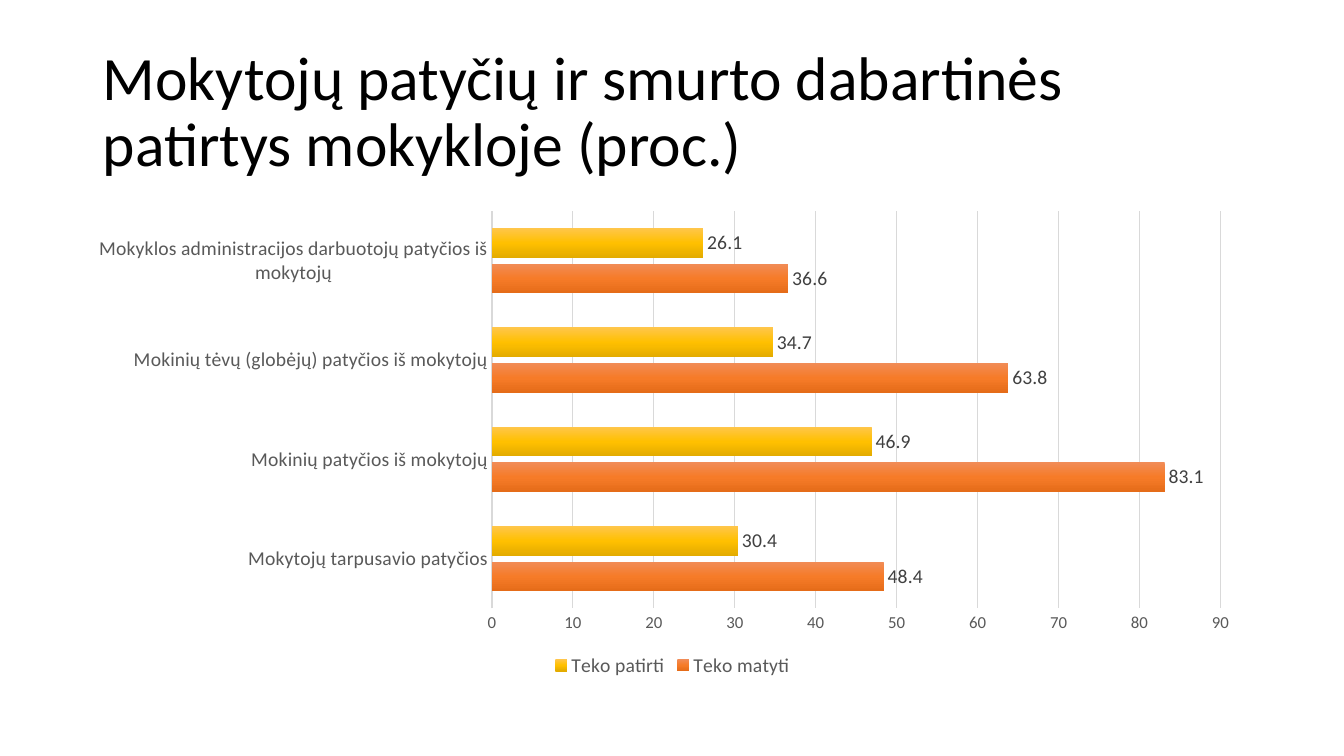
from copy import deepcopy
from pptx import Presentation
from pptx.chart.data import CategoryChartData
from pptx.dml.color import RGBColor
from pptx.enum import chart as ch, text as tx
from pptx.util import Inches, Pt

TITLE = "Mokytojų patyčių ir smurto dabartinės patirtys mokykloje (proc.)"
CATS = [
    "Mokytojų tarpusavio patyčios",
    "Mokinių patyčios iš mokytojų",
    "Mokinių tėvų (globėjų) patyčios iš mokytojų",
    "Mokyklos administracijos darbuotojų patyčios iš mokytojų",
]
SERIES = [
    ("Teko matyti", (48.4, 83.1, 63.8, 36.6), ("F18C57", "F67B28", "E56C19")),
    ("Teko patirti", (30.4, 46.9, 34.7, 26.1), ("FFC64B", "FFC000", "E3AB00")),
]
FACE = "Calibri"
GRAY, RULE = "595959", "D9D9D9"


def tint(hue):
    return RGBColor.from_string(hue)


def style(font, size, hue):
    font.name, font.size, font.bold = FACE, Pt(size), False
    font.color.rgb = tint(hue)


def write(shape, words, size=18, hue="000000", align=tx.PP_ALIGN.LEFT, gap=1.0):
    frame = shape.text_frame
    frame.auto_size = tx.MSO_AUTO_SIZE.NONE
    frame.word_wrap = True
    frame.vertical_anchor = tx.MSO_ANCHOR.MIDDLE
    para = frame.paragraphs[0]
    para.alignment, para.line_spacing = align, gap
    run = para.add_run()
    run.text = words
    style(run.font, size, hue)


def rule(line, width):
    line.color.rgb = tint(RULE)
    line.width = Pt(width)


def shade(ser, hues):
    fill = ser.format.fill
    fill.gradient()
    fill.gradient_angle = 270
    stops = next(ser._element.iter("{*}gsLst"))
    stops.append(deepcopy(stops[-1]))
    for i, (stop, hue) in enumerate(zip(fill.gradient_stops, hues)):
        stop.position = i / 2
        stop.color.rgb = tint(hue)


def main():
    prs = Presentation()
    prs.slide_width, prs.slide_height = Inches(13.33), Inches(7.5)
    slide = prs.slides.add_slide(prs.slide_layouts[5])

    title = slide.shapes.title
    title.left, title.top = Inches(0.92), Inches(0.4)
    title.width, title.height = Inches(10.97), Inches(1.45)
    write(title, TITLE, size=44, gap=0.9)

    data = CategoryChartData()
    data.categories = CATS
    for name, vals, hues in SERIES:
        data.add_series(name, vals)
    chart = slide.shapes.add_chart(
        ch.XL_CHART_TYPE.BAR_CLUSTERED,
        Inches(0.92), Inches(2), Inches(11.5), Inches(4.76), data).chart
    chart.has_title = False
    style(chart.font, 10, "000000")

    chart.has_legend = True
    chart.legend.position = ch.XL_LEGEND_POSITION.BOTTOM
    chart.legend.include_in_layout = False
    style(chart.legend.font, 14, GRAY)

    cat, val = chart.category_axis, chart.value_axis
    for axis, size in ((cat, 14), (val, 12)):
        axis.major_tick_mark = axis.minor_tick_mark = ch.XL_TICK_MARK.NONE
        style(axis.tick_labels.font, size, GRAY)
    rule(cat.format.line, 1)
    val.format.line.fill.background()
    val.minimum_scale, val.maximum_scale, val.major_unit = 0, 90, 10
    val.has_major_gridlines = True
    rule(val.major_gridlines.format.line, 0.75)

    plot = chart.plots[0]
    plot.gap_width, plot.overlap, plot.vary_by_categories = 115, -20, False
    for ser, (name, vals, hues) in zip(plot.series, SERIES):
        shade(ser, hues)
        labels = ser.data_labels
        labels.show_value = True
        labels.position = ch.XL_LABEL_POSITION.OUTSIDE_END
        style(labels.font, 14, "404040")

    prs.save("out.pptx")


if __name__ == "__main__":
    main()
